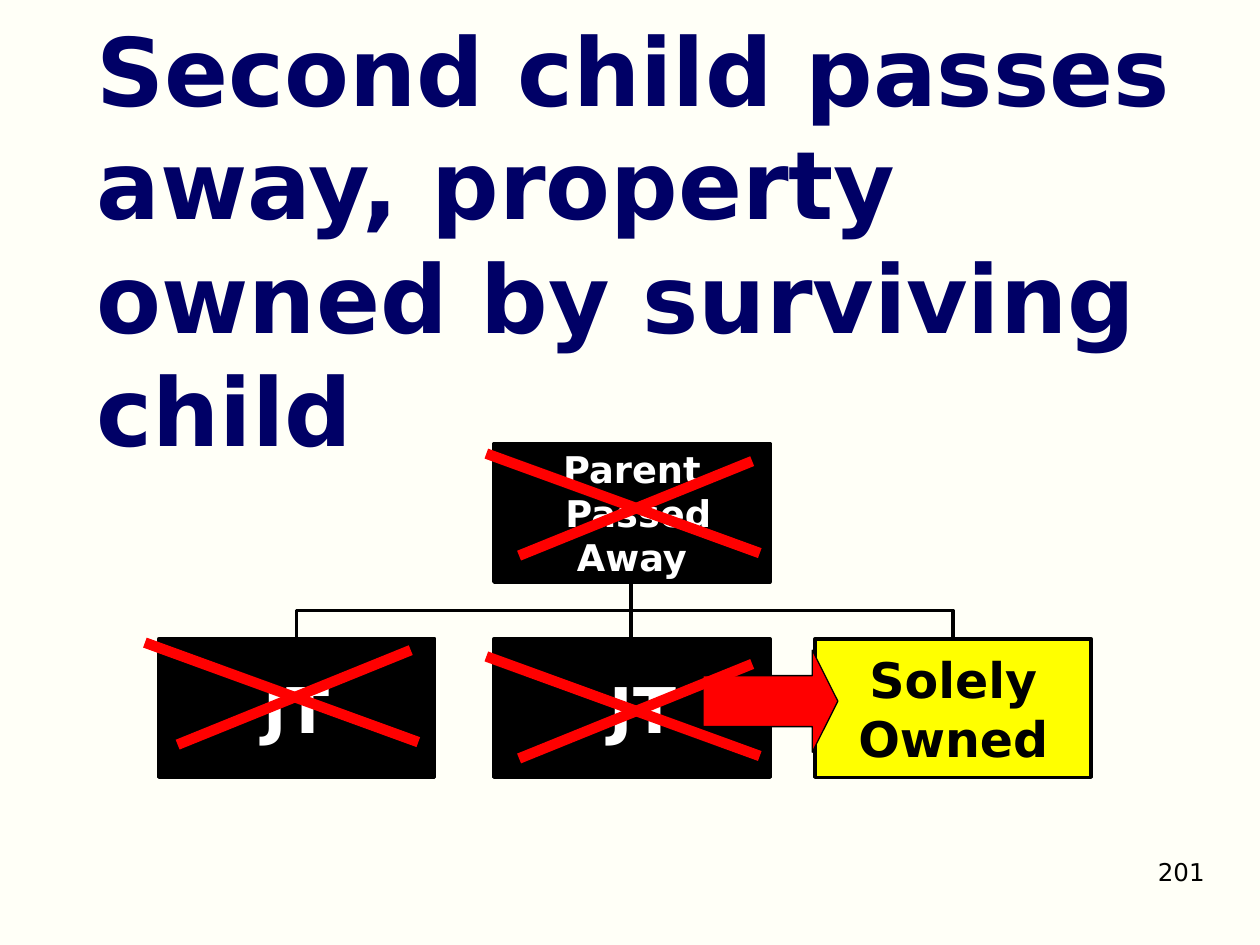
from dataclasses import dataclass

from lxml import etree
from pptx import Presentation
from pptx.dml.color import RGBColor
from pptx.enum.shapes import MSO_CONNECTOR as Connector, MSO_SHAPE as Shape
from pptx.enum.text import MSO_ANCHOR as Anchor, PP_ALIGN as Align
from pptx.oxml.ns import qn
from pptx.util import Inches, Pt

COLORS = {
    "paper": "FFFFF7",
    "title": "000066",
    "black": "000000",
    "white": "FFFFFF",
    "yellow": "FFFF00",
    "red": "FF0000",
}
FONT = "DejaVu Sans"
BOX_WIDTH, BOX_HEIGHT = 2.19, 1.1
PARENT_TOP, CHILD_TOP = 3.52, 5.07
TRUNK_X = 5.01


@dataclass
class Node:
    left: float
    top: float
    lines: list[str]
    size: int
    fill: str = "black"
    ink: str = "white"
    inset: float = 0.03


@dataclass
class Cross:
    left: float
    top: float


PARENT = Node(3.92, PARENT_TOP, ["Parent", " Passed", "Away"], 21, inset=0.01)
CHILDREN = [
    Node(1.26, CHILD_TOP, ["JT"], 36),
    Node(3.92, CHILD_TOP, [" JT"], 36),
    Node(6.47, CHILD_TOP, ["Solely\vOwned"], 28, "yellow", "black", 0.02),
]
CROSSES = [Cross(3.86, 3.6), Cross(1.15, 5.1), Cross(3.86, 5.21)]


def color(name: str) -> RGBColor:
    return RGBColor.from_string(COLORS[name])


def style_line(line, name: str, width: float) -> None:
    line.color.rgb = color(name)
    line.width = Pt(width)


def write(frame, lines: list[str], size: int, ink: str, bold: bool,
          align: Align, inset: tuple[float, float], anchor: Anchor) -> None:
    across, down = map(Inches, inset)
    frame_format = {
        "word_wrap": True, "vertical_anchor": anchor,
        "margin_left": across, "margin_right": across,
        "margin_top": down, "margin_bottom": down,
    }
    for name, value in frame_format.items():
        setattr(frame, name, value)
    for index, line in enumerate(lines):
        para = frame.add_paragraph() if index else frame.paragraphs[0]
        para.text = line
        para.alignment = align
        for span in para.runs:
            font_format = {"name": FONT, "size": Pt(size), "bold": bold}
            for name, value in font_format.items():
                setattr(span.font, name, value)
            span.font.color.rgb = color(ink)


def add_text(page, place: tuple[float, ...], text: str, size: int, ink: str,
             bold: bool, align: Align, anchor: Anchor) -> None:
    box = page.shapes.add_textbox(*map(Inches, place))
    write(box.text_frame, [text], size, ink, bold, align, (0.1, 0.05), anchor)


def add_preset(page, kind: Shape, place: tuple[float, ...], fill: str,
               line_width: float):
    shape = page.shapes.add_shape(kind, *map(Inches, place))
    shape.shadow.inherit = False
    shape.fill.solid()
    shape.fill.fore_color.rgb = color(fill)
    style_line(shape.line, "black", line_width)
    return shape


def add_node(page, node: Node) -> None:
    place = (node.left, node.top, BOX_WIDTH, BOX_HEIGHT)
    box = add_preset(page, Shape.RECTANGLE, place, node.fill, 2)
    write(box.text_frame, node.lines, node.size, node.ink, True,
          Align.CENTER, (node.inset, node.inset), Anchor.MIDDLE)


def add_branch(page, child: Node) -> None:
    start = PARENT_TOP + BOX_HEIGHT
    middle = (start + CHILD_TOP) / 2
    end_x = TRUNK_X if child.left == PARENT.left else child.left + BOX_WIDTH / 2
    points = [(TRUNK_X, middle), (end_x, middle), (end_x, CHILD_TOP)]
    builder = page.shapes.build_freeform(Inches(TRUNK_X), Inches(start))
    builder.add_line_segments(
        [(Inches(x), Inches(y)) for x, y in points], close=False)
    branch = builder.convert_to_shape()
    branch.shadow.inherit = False
    branch.fill.background()
    style_line(branch.line, "black", 2)


def add_cross(page, cross: Cross) -> None:
    strokes = [(2.17, 0.79, 0, 0), (0.26, 0.81, 2.11, 0.06)]
    for x1, y1, x2, y2 in strokes:
        stroke = page.shapes.add_connector(
            Connector.STRAIGHT,
            Inches(cross.left + x1), Inches(cross.top + y1),
            Inches(cross.left + x2), Inches(cross.top + y2))
        style_line(stroke.line, "red", 6)
        etree.SubElement(stroke._element.spPr, qn("a:effectLst"))


def main() -> None:
    deck = Presentation()
    deck.slide_width, deck.slide_height = Inches(10), Inches(7.5)
    page = deck.slides.add_slide(deck.slide_layouts[6])
    page.background.fill.solid()
    page.background.fill.fore_color.rgb = color("paper")

    add_text(page, (7.33, 6.75, 2.33, 0.52), "201", 14, "black", False,
             Align.RIGHT, Anchor.TOP)
    add_text(page, (0.67, 1.27, 9, 1.25),
             "Second child passes away, property owned by surviving child",
             54, "title", True, Align.LEFT, Anchor.MIDDLE)
    for child in reversed(CHILDREN):
        add_branch(page, child)
    for node in [PARENT, *CHILDREN]:
        add_node(page, node)
    arrow = add_preset(page, Shape.RIGHT_ARROW, (5.58, 5.16, 1.07, 0.81),
                       "red", 0.75)
    arrow.adjustments[0], arrow.adjustments[1] = 0.5, 0.25
    for cross in CROSSES:
        add_cross(page, cross)
    deck.save("out.pptx")


if __name__ == "__main__":
    main()
